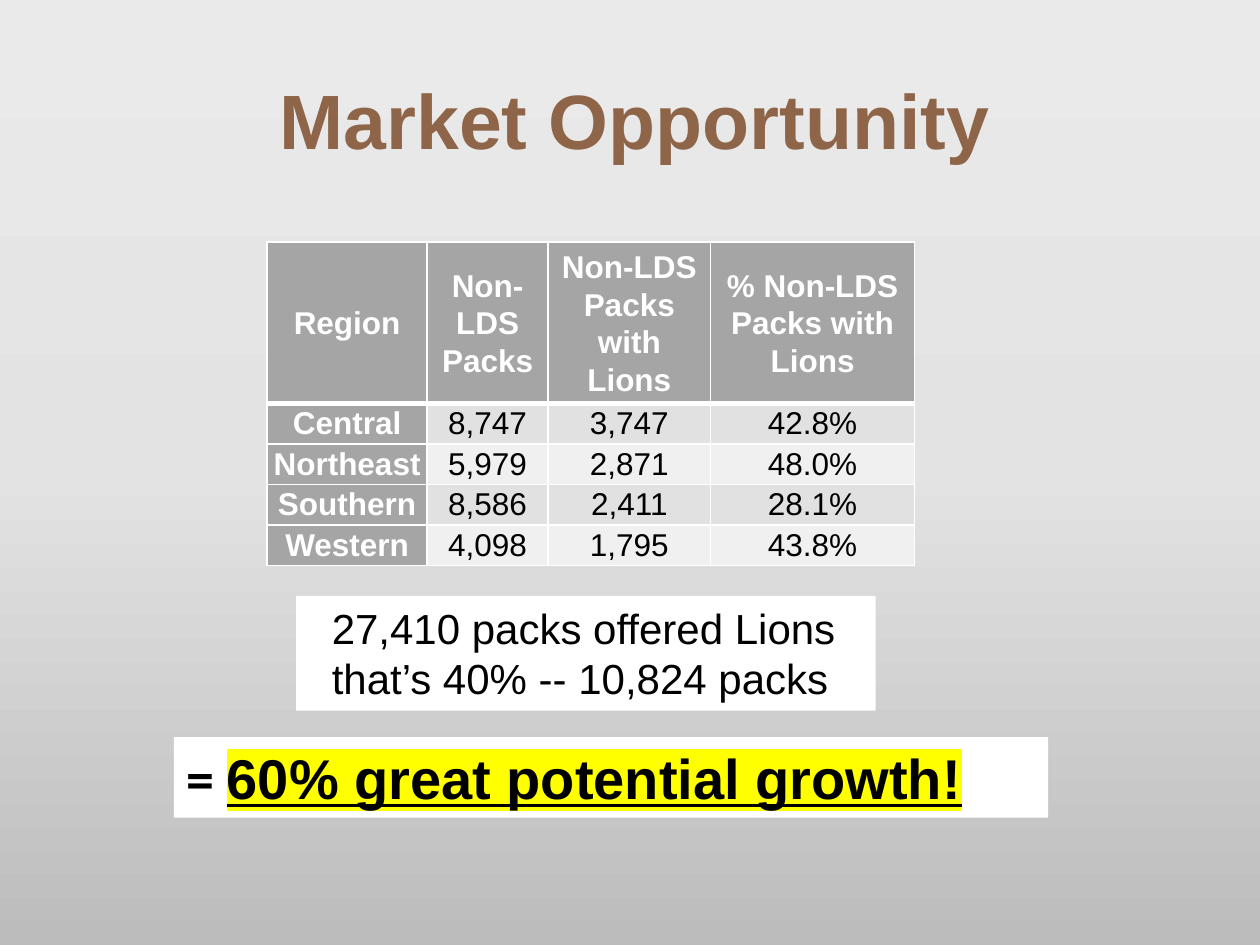
from copy import deepcopy

from lxml.etree import SubElement
from pptx import Presentation
from pptx.dml.color import RGBColor
from pptx.enum.shapes import MSO_SHAPE as Shape
from pptx.enum.text import MSO_ANCHOR as Anchor, PP_ALIGN as Align
from pptx.oxml.ns import qn
from pptx.util import Inches, Pt

BROWN = RGBColor(0x8E, 0x65, 0x48)
BLACK = RGBColor(0x00, 0x00, 0x00)
WHITE = RGBColor(0xFF, 0xFF, 0xFF)
YELLOW = RGBColor(0xFF, 0xFF, 0x00)
HEADER_GRAY = RGBColor(0xA5, 0xA5, 0xA5)
BANDS = (RGBColor(0xE1, 0xE1, 0xE1), RGBColor(0xF0, 0xF0, 0xF0))
BACKDROP = (RGBColor(0xEB, 0xEA, 0xEA), RGBColor(0xE4, 0xE3, 0xE3),
            RGBColor(0xBD, 0xBC, 0xBC))

COLUMNS, ROWS = 100, 75  # grid over the slide

REGIONS = [
    ("Region", "Non-LDS Packs", "Non-LDS Packs with Lions",
     "% Non-LDS Packs with Lions"),
    ("Central", "8,747", "3,747", "42.8%"),
    ("Northeast", "5,979", "2,871", "48.0%"),
    ("Southern", "8,586", "2,411", "28.1%"),
    ("Western", "4,098", "1,795", "43.8%"),
]


class SlideBuilder:
    """Holds the style and the current slide."""

    font_name = "Arial"

    def __init__(self, presentation):
        self.column = presentation.slide_width / COLUMNS
        self.row = presentation.slide_height / ROWS
        self.slide = presentation.slides.add_slide(presentation.slide_layouts[6])

    def across(self, columns):
        return round(columns * self.column)

    def down(self, rows):
        return round(rows * self.row)

    def place(self, left, top, width, height):
        return (self.across(left), self.down(top),
                self.across(width), self.down(height))

    def background(self, colors):
        fill = self.slide.background.fill
        fill.gradient()
        fill.gradient_angle = 270
        stop_list = next(self.slide.element.iter(qn("a:gsLst")))
        stop_list.insert(1, deepcopy(stop_list[0]))
        for index, (stop, color) in enumerate(zip(fill.gradient_stops, colors)):
            stop.position = index / (len(colors) - 1)
            stop.color.rgb = color

    def run(self, paragraph, text, size, color, bold=False, font_name=None,
            underline=None, highlight=None):
        run = paragraph.add_run()
        run.text = text
        font = run.font
        font.name = font_name or self.font_name
        font.size, font.bold, font.underline = Pt(size), bold, underline
        font.color.rgb = color
        if highlight is not None:
            properties = run.font._element
            mark = SubElement(properties, qn("a:highlight"))
            SubElement(mark, qn("a:srgbClr"), val=str(highlight))
            properties.find(qn("a:latin")).addprevious(mark)

    def title(self, text, *position):
        frame = self.slide.shapes.add_textbox(*self.place(*position)).text_frame
        frame.word_wrap = True
        frame.vertical_anchor = Anchor.MIDDLE
        paragraph = frame.paragraphs[0]
        paragraph.line_spacing = 0.9
        self.run(paragraph, text, 44, BROWN, bold=True)

    def panel(self, lines, *position, indent=0):
        """White box; each line is a list of run settings."""
        shape = self.slide.shapes.add_shape(Shape.RECTANGLE, *self.place(*position))
        shape.shadow.inherit = False
        shape.fill.solid()
        shape.fill.fore_color.rgb = WHITE
        shape.line.fill.background()
        frame = shape.text_frame
        frame.word_wrap = True
        frame.vertical_anchor = Anchor.TOP
        for index, runs in enumerate(lines):
            paragraph = frame.add_paragraph() if index else frame.paragraphs[0]
            paragraph.alignment = Align.LEFT
            if indent:
                margin = str(self.across(indent))
                paragraph._p.get_or_add_pPr().set("marL", margin)
            for settings in runs:
                self.run(paragraph, color=BLACK, **settings)

    def borders(self, cell, top, bottom):
        properties = cell._tc.get_or_add_tcPr()
        for side, width in (("L", 1), ("R", 1), ("T", top), ("B", bottom)):
            line = SubElement(properties, qn(f"a:ln{side}"), w=str(Pt(width)))
            fill = SubElement(line, qn("a:solidFill"))
            SubElement(fill, qn("a:srgbClr"), val=str(WHITE))

    def cell(self, cell, text, row, column):
        heading = row == 0 or column == 0
        self.borders(cell, top=3 if row == 1 else 1, bottom=3 if row == 0 else 1)
        cell.fill.solid()
        cell.fill.fore_color.rgb = HEADER_GRAY if heading else BANDS[(row - 1) % 2]
        cell.margin_left = cell.margin_right = Inches(0.05)
        cell.margin_top = cell.margin_bottom = 0
        cell.vertical_anchor = Anchor.MIDDLE if row == 0 else Anchor.TOP
        paragraph = cell.text_frame.paragraphs[0]
        paragraph.alignment = Align.CENTER
        paragraph.line_spacing = 1.07
        self.run(paragraph, text, 18, WHITE if heading else BLACK, bold=heading)

    def table(self, data, left, top, widths, heights):
        position = self.place(left, top, sum(widths), sum(heights))
        table = self.slide.shapes.add_table(len(data), len(widths), *position).table
        for column, width in zip(table.columns, widths):
            column.width = self.across(width)
        for row, height in zip(table.rows, heights):
            row.height = self.down(height)
        for row, values in enumerate(data):
            for column, text in enumerate(values):
                self.cell(table.cell(row, column), text, row, column)


def main():
    presentation = Presentation()
    presentation.slide_width, presentation.slide_height = Inches(10), Inches(7.5)
    builder = SlideBuilder(presentation)
    builder.background(BACKDROP)

    # Title
    builder.title("Market Opportunity", 21.2, 2.6, 69.4, 14.5)

    # Packs by region
    builder.table(REGIONS, 21.2, 19.2, widths=(12.7, 9.6, 12.9, 16.2),
                  heights=[11.9] + [3] * (len(REGIONS) - 1))

    # Current reach
    builder.panel([[dict(text="27,410 packs offered Lions", size=24)],
                   [dict(text="that’s 40% -- 10,824 packs", size=24)]],
                  23.5, 47.3, 46, 9.1, indent=1.85)

    # Growth potential
    builder.panel([[dict(text="= ", size=32, bold=True, font_name="Calibri"),
                    dict(text="60% great potential growth!", size=32, bold=True,
                         underline=True, highlight=YELLOW)]],
                  13.8, 58.5, 69.4, 6.4)

    presentation.save("out.pptx")


if __name__ == "__main__":
    main()
